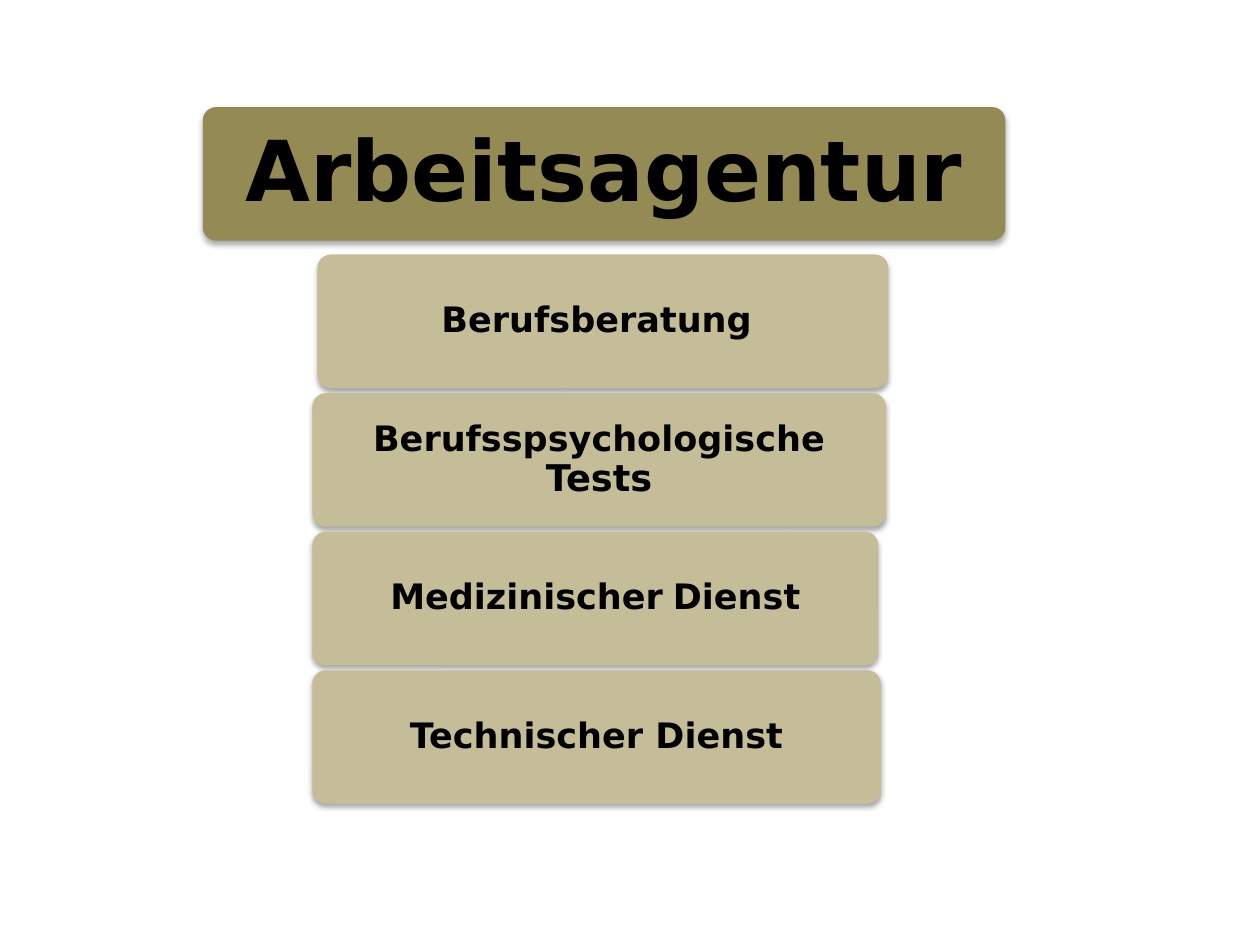
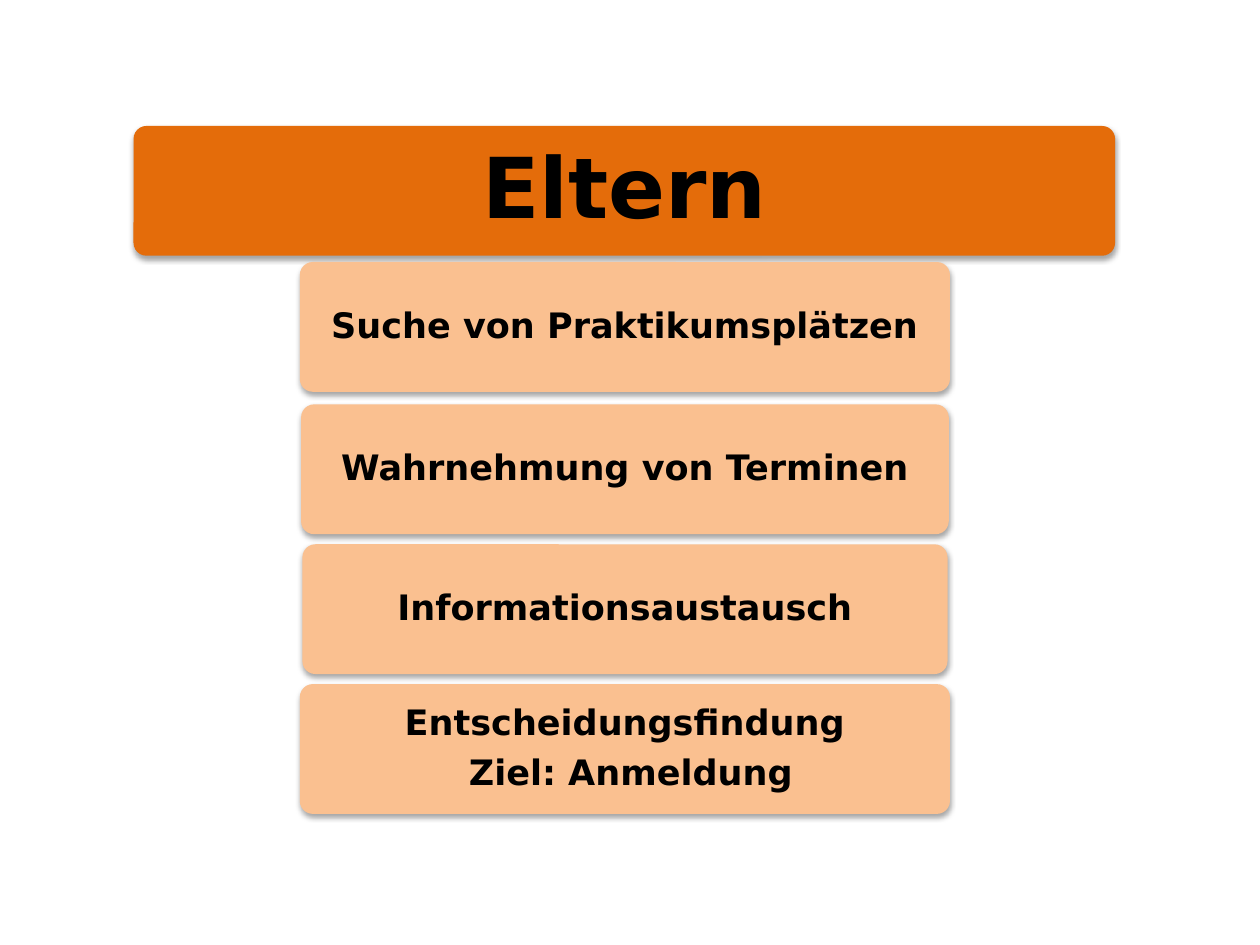
from lxml import etree
from pptx import Presentation
from pptx import util as u
from pptx.dml.color import RGBColor
from pptx.enum import shapes, text
from pptx.oxml.ns import qn

TITLE_ONLY = 5


def color(value):
    return RGBColor.from_string(value)


class Deck:
    """Holds the shared style and the current slide."""

    font = {"name": "DejaVu Sans", "bold": True}
    font_color = "000000"
    title_size, item_size = 48, 20
    title_inset, item_inset = 0.23, 0.11

    def __init__(self):
        self.prs = Presentation()
        self.prs.slide_width, self.prs.slide_height = u.Inches(10), u.Inches(7.5)

    def new_slide(self):
        self.slide = self.prs.slides.add_slide(self.prs.slide_layouts[TITLE_ONLY])

    def panel(self, left, top, width, height, fill):
        panel = self.slide.shapes.add_shape(
            shapes.MSO_SHAPE.ROUNDED_RECTANGLE, *map(u.Inches, (left, top, width, height)))
        panel.adjustments[0] = 0.1
        panel.fill.solid()
        panel.fill.fore_color.rgb = color(fill)
        panel.line.fill.background()
        panel.shadow.inherit = False
        effects = panel._element.spPr.find(qn("a:effectLst"))
        shadow = etree.SubElement(effects, qn("a:outerShdw"), blurRad="40000", dist="23000",
                                  dir="5400000", rotWithShape="0")
        black = etree.SubElement(shadow, qn("a:srgbClr"), val="000000")
        etree.SubElement(black, qn("a:alpha"), val="35000")
        return panel

    def label(self, frame, paragraphs, size, inset):
        frame_format = {"word_wrap": True, "auto_size": text.MSO_AUTO_SIZE.NONE,
                        "vertical_anchor": text.MSO_ANCHOR.MIDDLE}
        for side in ("left", "top", "right", "bottom"):
            frame_format[f"margin_{side}"] = u.Inches(inset)
        for name, value in frame_format.items():
            setattr(frame, name, value)
        paragraph_format = {"alignment": text.PP_ALIGN.CENTER, "line_spacing": 0.9,
                            "space_after": u.Pt(size * 0.35)}
        for index, runs in enumerate(paragraphs):
            paragraph = frame.add_paragraph() if index else frame.paragraphs[0]
            for name, value in paragraph_format.items():
                setattr(paragraph, name, value)
            for words, run_size in runs:
                run = paragraph.add_run()
                run.text = words
                for name, value in {**self.font, "size": u.Pt(run_size)}.items():
                    setattr(run.font, name, value)
                run.font.color.rgb = color(self.font_color)

    def title(self, words, left, top, width, height, fill):
        band = self.panel(left, top, width, height, fill)
        title = self.slide.shapes.title
        title._element.addprevious(band._element)
        for name in ("left", "top", "width", "height"):
            setattr(title, name, getattr(band, name))
        self.label(title.text_frame, [[(words, self.title_size)]],
                   self.title_size, self.title_inset)

    def item(self, paragraphs, left, top, width, height, fill):
        panel = self.panel(left, top, width, height, fill)
        self.label(panel.text_frame, paragraphs, self.item_size, self.item_inset)


def lines(*words):
    return [[(line, Deck.item_size)] for line in words]


TOPICS = [
    {"title": "Arbeitsagentur", "band": (1.61, 0.85, 6.37), "height": 1.06,
     "fills": ("948A54", "C4BD97"),
     "items": [
         (lines("Berufsberatung "), 2.52, 2.02, 4.53),
         ([[("Berufsspsychologische", 20), (" Tests", 21)]], 2.48, 3.12, 4.55),
         ([[("Medizinischer", 20), (" ", 16), ("Dienst", 20)]], 2.48, 4.22, 4.49),
         (lines("Technischer Dienst"), 2.48, 5.32, 4.51)]},
    {"title": "Eltern", "band": (1.06, 1, 7.79), "height": 1.03,
     "fills": ("E46C0A", "FAC090"),
     "items": [
         (lines("Suche von Praktikumsplätzen"), 2.38, 2.08, 5.16),
         (lines("Wahrnehmung von Terminen"), 2.39, 3.21, 5.14),
         (lines("Informationsaustausch"), 2.4, 4.32, 5.12),
         (lines("Entscheidungsfindung", " Ziel: Anmeldung"), 2.38, 5.43, 5.16)]},
]


def main():
    deck = Deck()
    for topic in TOPICS:
        deck.new_slide()
        band_fill, item_fill = topic["fills"]
        deck.title(topic["title"], *topic["band"], topic["height"], band_fill)
        for item in topic["items"]:
            deck.item(*item, topic["height"], item_fill)
    deck.prs.save("out.pptx")


if __name__ == "__main__":
    main()
